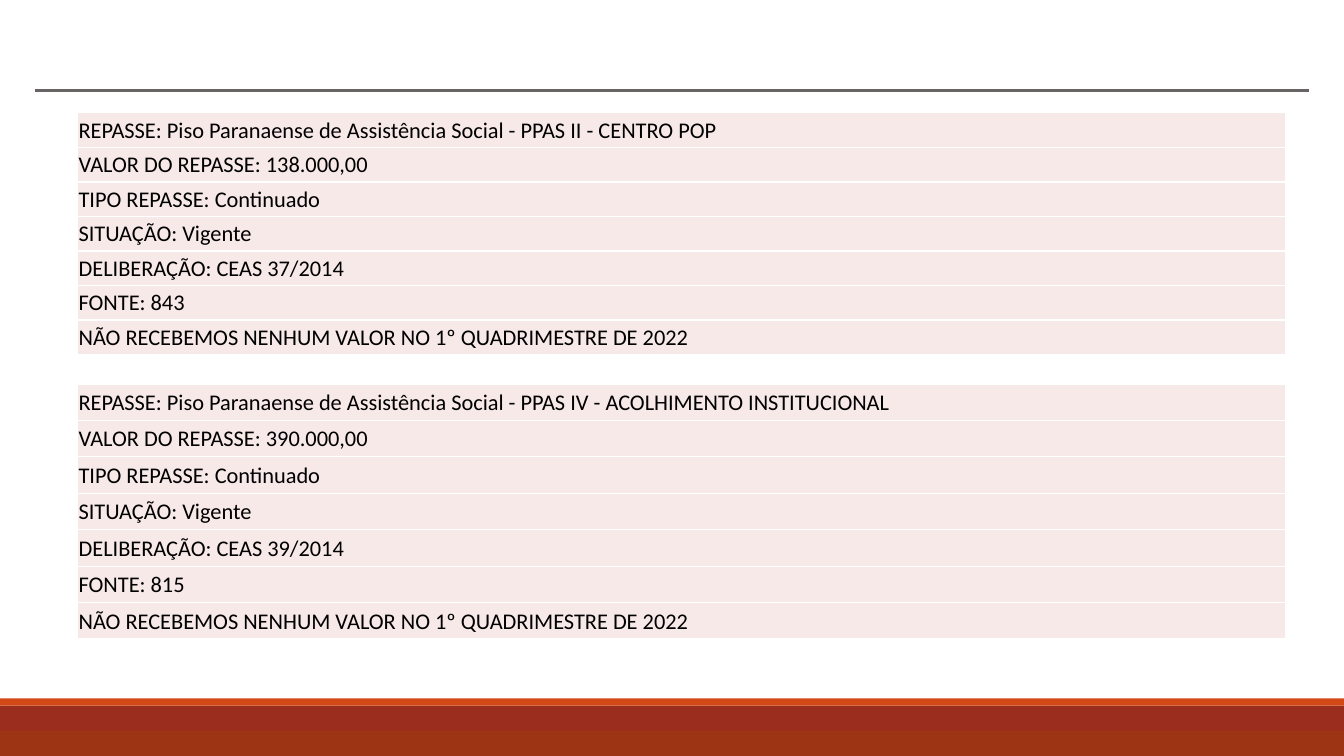
from lxml import etree
from pptx import Presentation
from pptx.dml.color import RGBColor
from pptx.enum.shapes import MSO_CONNECTOR, MSO_SHAPE
from pptx.enum.text import MSO_ANCHOR
from pptx.oxml.ns import qn
from pptx.util import Inches, Pt

RECT = MSO_SHAPE.RECTANGLE
STRAIGHT = MSO_CONNECTOR.STRAIGHT
MIDDLE = MSO_ANCHOR.MIDDLE

COLORS = {
    "red": "9B2D1F",
    "orange": "D34817",
    "brown": "9E3611",
    "rule": "696464",
    "cell": "F7E9E8",
    "border": "FFFFFF",
    "text": "000000",
}


class TransferSlide:
    """Holds the style and the slide listing the fund transfers."""

    def __init__(self, prs):
        self.slide = prs.slides.add_slide(prs.slide_layouts[6])
        self.font = "Calibri"
        self.size = Pt(16)

    def color(self, name):
        return RGBColor.from_string(COLORS[name])

    def band(self, top, height, color, opacity=100):
        s = self.slide.shapes.add_shape(
            RECT, 0, Inches(top), Inches(13.33), Inches(height))
        s.shadow.inherit = False
        s.fill.solid()
        s.fill.fore_color.rgb = self.color(color)
        s.line.fill.background()
        if opacity < 100:
            clr = s.fill._xPr.find(qn("a:solidFill"))[0]
            etree.SubElement(clr, qn("a:alpha"), val=str(opacity * 1000))

    def rule(self, left, right, y):
        s = self.slide.shapes.add_connector(
            STRAIGHT, Inches(left), Inches(y), Inches(right), Inches(y))
        s.line.color.rgb = self.color("rule")
        s.line.width = Pt(2.25)
        etree.SubElement(s._element.spPr, qn("a:effectLst"))

    def borders(self, cell):
        tcPr = cell._tc.get_or_add_tcPr()
        for i, side in enumerate(("lnL", "lnR", "lnT", "lnB")):
            ln = etree.Element(qn(f"a:{side}"), w=str(Pt(1)))
            fill = etree.SubElement(ln, qn("a:solidFill"))
            etree.SubElement(fill, qn("a:srgbClr"), val=COLORS["border"])
            tcPr.insert(i, ln)

    def table(self, top, height, lines):
        tbl = self.slide.shapes.add_table(
            len(lines), 1, Inches(0.77), Inches(top),
            Inches(11.98), Inches(height)).table
        for cell, line in zip(tbl.iter_cells(), lines):
            cell.fill.solid()
            cell.fill.fore_color.rgb = self.color("cell")
            cell.vertical_anchor = MIDDLE
            cell.margin_left = cell.margin_right = Inches(0.01)
            cell.margin_top = Inches(0.01)
            cell.margin_bottom = 0
            self.borders(cell)
            p = cell.text_frame.paragraphs[0]
            p.text = line
            p.font.name = self.font
            p.font.size = self.size
            p.font.bold = False
            p.font.color.rgb = self.color("text")


def transfer_lines(program, value, resolution, source):
    return [
        f"REPASSE: Piso Paranaense de Assistência Social - {program}",
        f"VALOR DO REPASSE: {value}",
        "TIPO REPASSE: Continuado",
        "SITUAÇÃO: Vigente",
        f"DELIBERAÇÃO: CEAS {resolution}",
        f"FONTE: {source}",
        "NÃO RECEBEMOS NENHUM VALOR NO 1º QUADRIMESTRE DE 2022",
    ]


def main():
    prs = Presentation()
    prs.slide_width = Inches(13.33)
    prs.slide_height = Inches(7.5)
    page = TransferSlide(prs)
    page.band(7, 0.5, "red")
    page.band(6.93, 0.07, "orange")
    page.rule(0.35, 12.98, 0.9)
    page.band(7.25, 0.25, "brown", opacity=85)
    page.table(1.12, 2.4, transfer_lines(
        "PPAS II - CENTRO POP", "138.000,00", "37/2014", "843"))
    page.table(3.81, 2.53, transfer_lines(
        "PPAS IV - ACOLHIMENTO INSTITUCIONAL", "390.000,00", "39/2014", "815"))
    prs.save("out.pptx")


if __name__ == "__main__":
    main()
